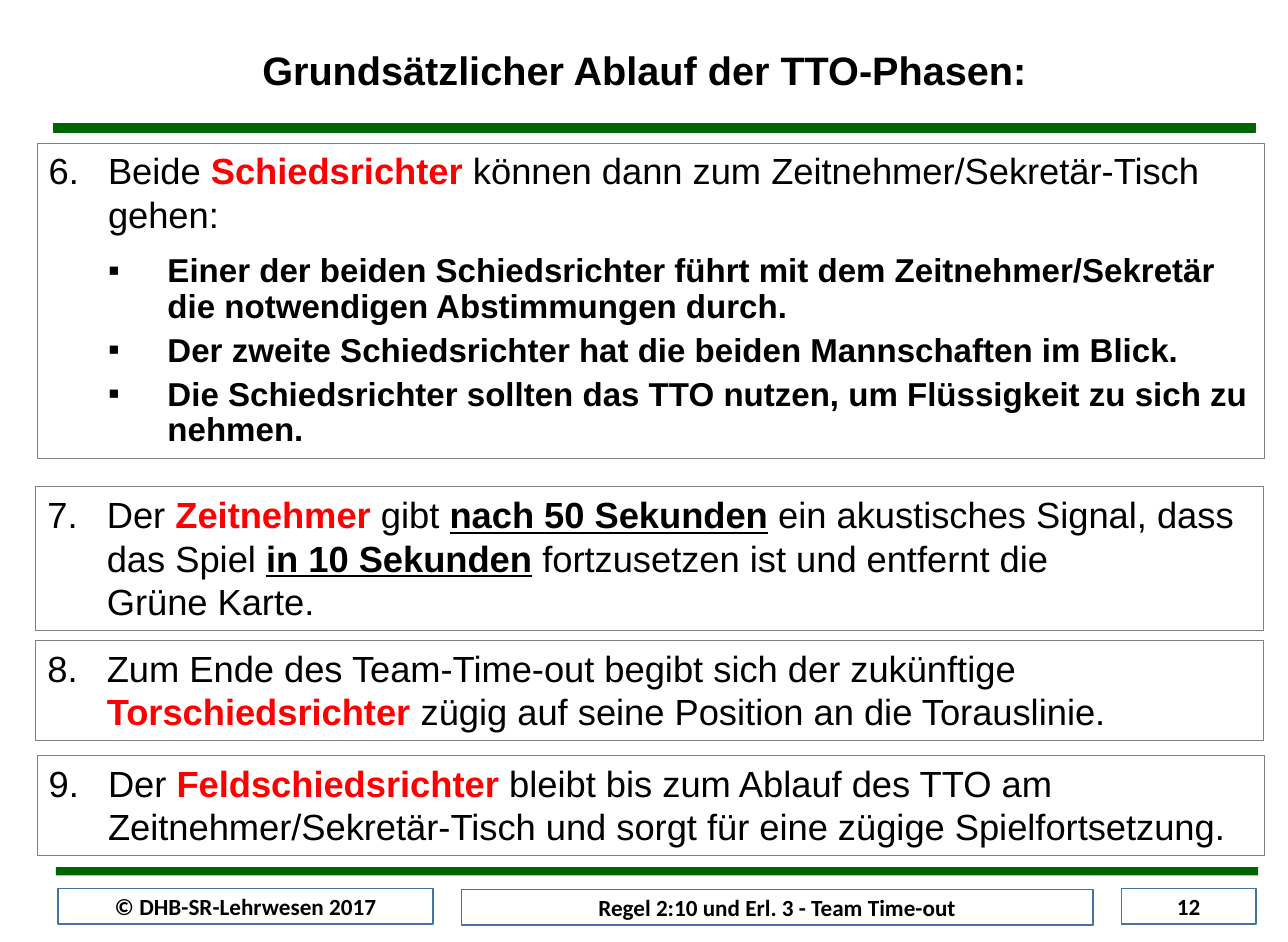
from lxml import etree
from pptx import Presentation
from pptx import util as u
from pptx.dml.color import RGBColor
from pptx.enum import shapes, text
from pptx.oxml.ns import qn

PX = 9144
COLORS = {"green": "006600", "white": "FFFFFF", "blue": "43739E",
          "gray": "808080", "black": "000000", "red": "FF0000"}


class Deck:
    def __init__(self, width, height):
        self.prs = Presentation()
        self.prs.slide_width = u.Emu(width * PX)
        self.prs.slide_height = u.Emu(height * PX)
        self.s = self.prs.slides.add_slide(self.prs.slide_layouts[6])

    def color(self, name):
        return RGBColor.from_string(COLORS[name])

    def format(self, font, size, name="Arial", color="black", bold=False, underline=False):
        font.size = u.Pt(size)
        font.name = name
        font.bold = bold
        font.underline = underline
        font.color.rgb = self.color(color)

    def rect(self, box, fill=None, line=None, weight=1):
        sp = self.s.shapes.add_shape(shapes.MSO_SHAPE.RECTANGLE, *[u.Emu(v * PX) for v in box])
        sp.shadow.inherit = False
        if fill:
            sp.fill.solid()
            sp.fill.fore_color.rgb = self.color(fill)
        else:
            sp.fill.background()
        if line:
            sp.line.color.rgb = self.color(line)
            sp.line.width = u.Pt(weight)
        else:
            sp.line.fill.background()
        return sp

    def label(self, box, words):
        tf = self.rect(box, "white", "blue").text_frame
        tf.word_wrap = True
        tf.vertical_anchor = text.MSO_ANCHOR.MIDDLE
        tf.text = words
        p = tf.paragraphs[0]
        p.alignment = text.PP_ALIGN.CENTER
        self.format(p.runs[0].font, 14, "Calibri", bold=True)

    def title(self, box, words):
        tf = self.s.shapes.add_textbox(*[u.Emu(v * PX) for v in box]).text_frame
        tf.word_wrap = True
        tf.text = words
        p = tf.paragraphs[0]
        p.alignment = text.PP_ALIGN.CENTER
        self.format(p.runs[0].font, 24, bold=True)

    def bullet(self, p, indent, tag, **attrs):
        pPr = p._p.get_or_add_pPr()
        pPr.set("marL", str(indent * PX))
        pPr.set("indent", str(-50 * PX))
        etree.SubElement(pPr, qn("a:buFont"), typeface="Arial")
        etree.SubElement(pPr, qn(tag), **attrs)

    def step(self, number, box, parts, details=()):
        tf = self.rect(box, line="gray", weight=0.25).text_frame
        tf.word_wrap = True
        tf.vertical_anchor = text.MSO_ANCHOR.TOP
        tf.auto_size = text.MSO_AUTO_SIZE.SHAPE_TO_FIT_TEXT
        p = tf.paragraphs[0]
        p.alignment = text.PP_ALIGN.LEFT
        p.space_after = u.Pt(6)
        self.bullet(p, 50, "a:buAutoNum", type="arabicPeriod", startAt=str(number))
        for words, style in parts:
            if words == "\n":
                p.add_line_break()
                continue
            r = p.add_run()
            r.text = words
            self.format(r.font, 22, **style)
        for words in details:
            p = tf.add_paragraph()
            p.text = words
            p.level = 1
            p.alignment = text.PP_ALIGN.LEFT
            p.line_spacing = 0.9
            p.space_before = u.Pt(5)
            self.bullet(p, 100, "a:buChar", char="▪")
            self.format(p.runs[0].font, 20, bold=True)


PLAIN = {}
ROLE = {"color": "red", "bold": True}
TIME = {"bold": True, "underline": True}


def main():
    deck = Deck(1083, 792)
    deck.rect((45, 104, 1011, 7), "green", "green", 0.75)
    deck.rect((47, 729, 1011, 7), "green")
    deck.label((49, 747, 315, 30), "© DHB-SR-Lehrwesen 2017")
    deck.label((943, 747, 113, 30), "12")
    deck.label((388, 748, 531, 30), "Regel 2:10 und Erl. 3 - Team Time-out")
    deck.step(6, (31, 120, 1032, 265), [
        ("Beide ", PLAIN),
        ("Schiedsrichter ", ROLE),
        ("können dann zum Zeitnehmer/Sekretär-Tisch gehen:", PLAIN),
    ], [
        "Einer der beiden Schiedsrichter führt mit dem Zeitnehmer/Sekretär "
        "die notwendigen Abstimmungen durch.",
        "Der zweite Schiedsrichter hat die beiden Mannschaften im Blick.",
        "Die Schiedsrichter sollten das TTO nutzen, um Flüssigkeit zu sich zu nehmen.",
    ])
    deck.step(7, (30, 409, 1032, 121), [
        ("Der ", PLAIN),
        ("Zeitnehmer", ROLE),
        (" gibt ", PLAIN),
        ("nach 50 Sekunden", TIME),
        (" ein akustisches Signal, dass das Spiel ", PLAIN),
        ("in 10 Sekunden", TIME),
        (" fortzusetzen ist und entfernt die ", PLAIN),
        ("\n", PLAIN),
        ("Grüne Karte.", PLAIN),
    ])
    deck.step(8, (30, 538, 1032, 84), [
        ("Zum Ende des Team-Time-out begibt sich der zukünftige ", PLAIN),
        ("Torschiedsrichter", ROLE),
        (" zügig auf seine Position an die Torauslinie.", PLAIN),
    ])
    deck.step(9, (31, 635, 1032, 84), [
        ("Der ", PLAIN),
        ("Feldschiedsrichter", ROLE),
        (" bleibt bis zum Ablauf des TTO am Zeitnehmer/Sekretär-Tisch "
         "und sorgt für eine zügige Spielfortsetzung.", PLAIN),
    ])
    deck.title((194, 34, 705, 50), "Grundsätzlicher Ablauf der TTO-Phasen: ")
    deck.prs.save("out.pptx")


if __name__ == "__main__":
    main()
